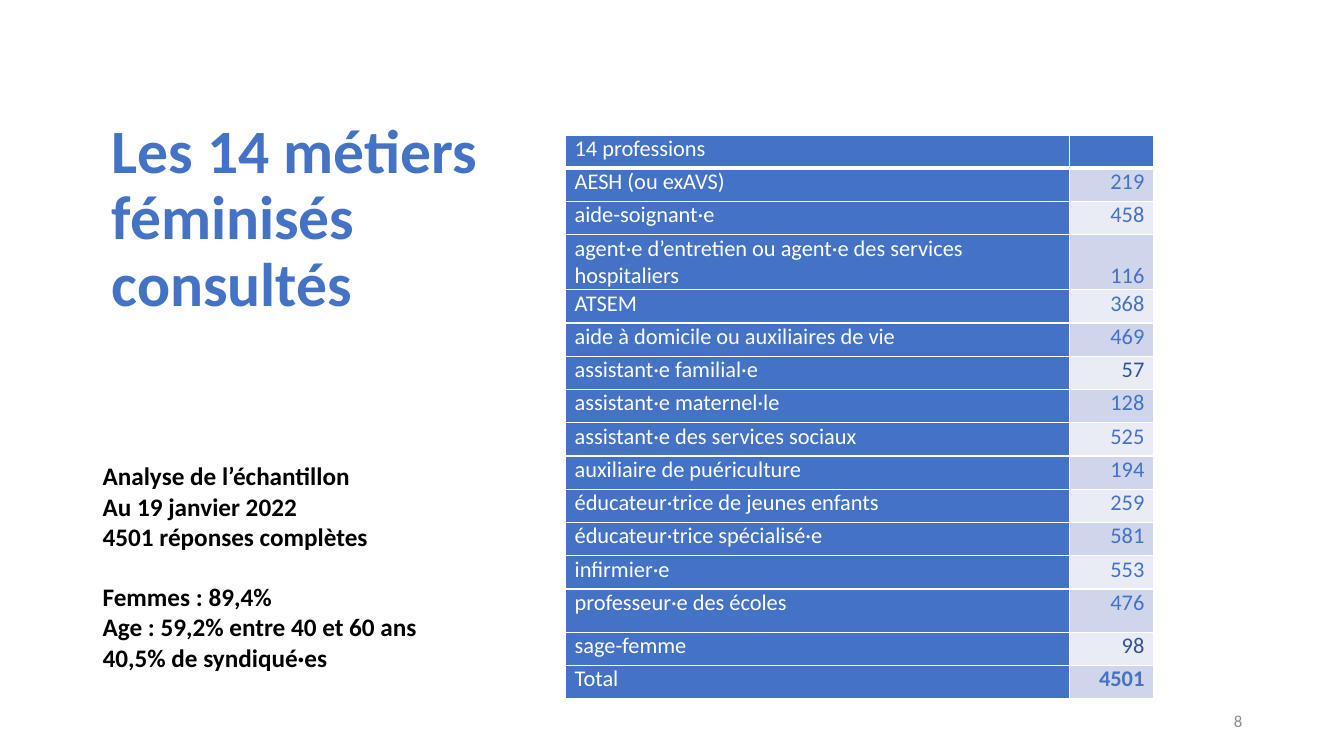
from dataclasses import dataclass

from lxml.etree import SubElement
from pptx import Presentation
from pptx.dml.color import RGBColor as Rgb
from pptx.enum.text import MSO_ANCHOR as Anchor, PP_ALIGN as Align
from pptx.oxml.ns import qn
from pptx.util import Inches, Pt


@dataclass(frozen=True)
class Theme:
    """Colours, font and type sizes of the slide."""
    font: str = "Calibri"
    blue: str = "4472C4"
    navy: str = "2F5597"
    white: str = "FFFFFF"
    black: str = "000000"
    grey: str = "8C8C8C"
    bands: tuple = ("E9EBF5", "CFD5EA")
    title: int = 44
    body: int = 18
    cell: int = 16
    number: int = 12


THEME = Theme()
PROFESSIONS = [
    ("AESH (ou exAVS)", 219),
    ("aide-soignant·e", 458),
    ("agent·e d’entretien ou agent·e des services hospitaliers", 116),
    ("ATSEM", 368),
    ("aide à domicile ou auxiliaires de vie", 469),
    ("assistant·e familial·e", 57),
    ("assistant·e maternel·le", 128),
    ("assistant·e des services sociaux", 525),
    ("auxiliaire de puériculture", 194),
    ("éducateur·trice de jeunes enfants", 259),
    ("éducateur·trice spécialisé·e", 581),
    ("infirmier·e", 553),
    ("professeur·e des écoles", 476),
    ("sage-femme", 98),
]
SAMPLE = ["Analyse de l’échantillon", "Au 19 janvier 2022", "4501 réponses complètes"]
PROFILE = ["Femmes : 89,4%", "Age : 59,2% entre 40 et 60 ans", "40,5% de syndiqué·es"]
ROW_HEIGHT = 0.33
TALL_ROWS = {3: 0.54, 13: 0.43}


def style_para(para, size, color, bold=False, align=Align.LEFT):
    """Set the font and alignment of a paragraph."""
    para.alignment = align
    para.font.name = THEME.font
    para.font.size = Pt(size)
    para.font.bold = bold
    para.font.color.rgb = Rgb.from_string(color)


def add_text(page, box, lines, size, color, bold=False, align=Align.LEFT, anchor=Anchor.TOP):
    """Add a wrapped text box and return its paragraphs."""
    frame = page.shapes.add_textbox(*map(Inches, box)).text_frame
    frame.word_wrap = True
    frame.vertical_anchor = anchor
    frame.text = "\n".join(lines)
    for para in frame.paragraphs:
        style_para(para, size, color, bold, align)
    return frame.paragraphs


def add_title(page, box):
    """Add the slide title."""
    lines = ["Les 14 métiers féminisés consultés"]
    paras = add_text(page, box, lines, THEME.title, THEME.blue, True, anchor=Anchor.MIDDLE)
    paras[0].line_spacing = 0.9


def add_sample(page, box):
    """Add the two groups of facts about the sample."""
    paras = add_text(page, box, SAMPLE + PROFILE, THEME.body, THEME.black, True)
    paras[len(SAMPLE)].space_before = Pt(1.2 * THEME.body)


def add_borders(cell, bottom):
    """Draw white borders around a cell."""
    props = cell._tc.get_or_add_tcPr()
    for place, (side, width) in enumerate(zip("LRTB", (1, 1, 1, bottom))):
        line = SubElement(props, qn(f"a:ln{side}"), w=str(Pt(width)))
        SubElement(SubElement(line, qn("a:solidFill")), qn("a:srgbClr"), val=THEME.white)
        props.insert(place, line)


def fill_cell(cell, text, fill, color, bold=False, align=Align.LEFT, bottom=1):
    """Write and format one table cell."""
    cell.margin_left = cell.margin_right = Inches(0.09)
    cell.margin_top = cell.margin_bottom = 0
    cell.fill.solid()
    cell.fill.fore_color.rgb = Rgb.from_string(fill)
    add_borders(cell, bottom)
    cell.text = text
    style_para(cell.text_frame.paragraphs[0], THEME.cell, color, bold, align)


def add_professions(page, box):
    """Add the table of answers by profession."""
    total = sum(count for _, count in PROFESSIONS)
    rows = PROFESSIONS + [("Total", total)]
    table = page.shapes.add_table(len(rows) + 1, 2, *map(Inches, box)).table
    table.first_row = table.horz_banding = False
    for column, width in zip(table.columns, (5, box[2] - 5)):
        column.width = Inches(width)
    for index, row in enumerate(table.rows):
        row.height = Inches(TALL_ROWS.get(index, ROW_HEIGHT))
    fill_cell(table.cell(0, 0), "14 professions", THEME.blue, THEME.white, bottom=3)
    fill_cell(table.cell(0, 1), "", THEME.blue, THEME.white, bottom=3)
    for index, (name, count) in enumerate(rows, 1):
        fill_cell(table.cell(index, 0), name, THEME.blue, THEME.white)
        color = THEME.navy if count < 100 else THEME.blue
        fill_cell(table.cell(index, 1), str(count), THEME.bands[index % 2], color,
                  bold=name == "Total", align=Align.RIGHT)
    table.cell(3, 1).vertical_anchor = Anchor.BOTTOM


def add_page_number(page, box):
    """Add the page number."""
    add_text(page, box, ["8"], THEME.number, THEME.grey, align=Align.RIGHT, anchor=Anchor.MIDDLE)


def main():
    """Build and save the deck."""
    deck = Presentation()
    deck.slide_width, deck.slide_height = Inches(13.33), Inches(7.5)
    page = deck.slides.add_slide(deck.slide_layouts[6])
    add_professions(page, (5.61, 1.34, 5.83, 5.6))
    add_sample(page, (0.92, 4.52, 3.56, 2.22))
    add_title(page, (1.01, 0.8, 4.18, 2.76))
    add_page_number(page, (9.42, 6.95, 3, 0.4))
    deck.save("out.pptx")


if __name__ == "__main__":
    main()
